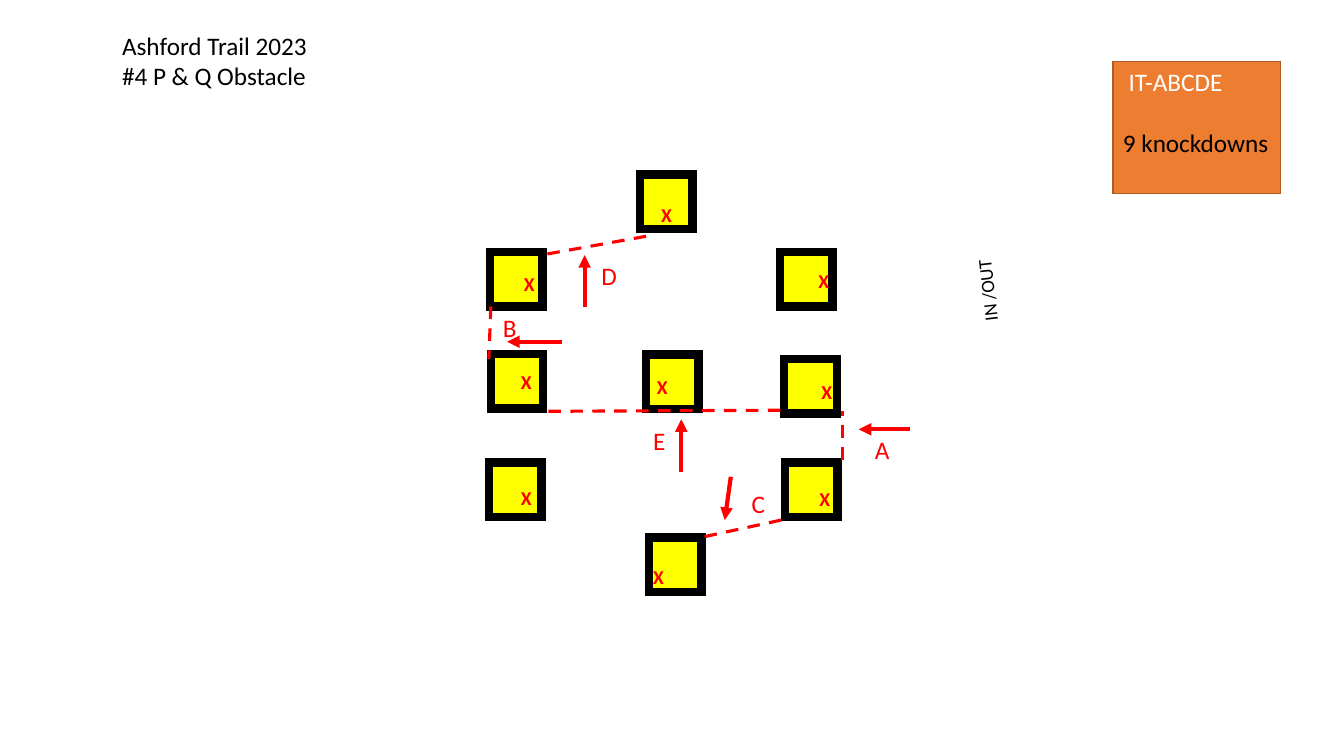
from dataclasses import dataclass

from lxml.etree import SubElement
from pptx import Presentation
from pptx.dml.color import RGBColor as RGB
from pptx.enum.dml import MSO_LINE_DASH_STYLE as DASH
from pptx.enum.shapes import MSO_CONNECTOR as CONNECTOR, MSO_SHAPE as SHAPE
from pptx.enum.text import MSO_ANCHOR as ANCHOR, MSO_AUTO_SIZE as AUTOSIZE, PP_ALIGN as ALIGN
from pptx.oxml.ns import qn
from pptx.util import Pt


@dataclass(frozen=True)
class Theme:
    font: str = "Calibri"
    black: RGB = RGB(0, 0, 0)
    white: RGB = RGB(255, 255, 255)
    red: RGB = RGB(255, 0, 0)
    yellow: RGB = RGB(255, 255, 0)
    orange: RGB = RGB(0xED, 0x7D, 0x31)
    rust: RGB = RGB(0xAF, 0x5C, 0x24)
    text: float = 18
    marker: float = 14
    gate: float = 13.5


theme = Theme()


def write(shape, lines, size, colors, bold=False):
    frame = shape.text_frame
    layout = {"word_wrap": False, "auto_size": AUTOSIZE.NONE, "vertical_anchor": ANCHOR.TOP}
    for key, value in layout.items():
        setattr(frame, key, value)
    frame.text = "\n".join(lines)
    for paragraph, color in zip(frame.paragraphs, colors):
        paragraph.alignment = ALIGN.LEFT
        font = paragraph.runs[0].font
        for key, value in {"name": theme.font, "size": Pt(size), "bold": bold}.items():
            setattr(font, key, value)
        font.color.rgb = color


def add_box(x, y, width, height, fill, outline, weight):
    box = slide.shapes.add_shape(SHAPE.RECTANGLE, Pt(x), Pt(y), Pt(width), Pt(height))
    box.shadow.inherit = False
    box.fill.solid()
    box.fill.fore_color.rgb = fill
    box.line.color.rgb = outline
    box.line.width = Pt(weight)
    SubElement(box._element.spPr.find(qn("a:ln")), qn("a:miter"), lim="800000")
    return box


deck = Presentation()
deck.slide_width, deck.slide_height = Pt(960), Pt(540)
slide = deck.slides.add_slide(deck.slide_layouts[5])

heading = slide.shapes.title
place = {"left": 80, "top": 18, "width": 161.3, "height": 51}
for key, value in place.items():
    setattr(heading, key, Pt(value))
write(heading, ["Ashford Trail 2023", "#4 P & Q Obstacle"], theme.text, [theme.black] * 2)

posts_and_knockdowns = [
    ((463.7, 383.8), (459.4, 400.3)),
    ((457.2, 124.6), (465.1, 141.1)),
    ((349.2, 330.5), (365, 343.4)),
    ((350.6, 252.7), (365, 260.6)),
    ((560.9, 330.5), (578.2, 344.2)),
    ((461.5, 253.4), (462.2, 264.2)),
    ((560.2, 256.3), (579.6, 267.8)),
    ((349.9, 180), (367.2, 190.8)),
    ((557.3, 180), (577.4, 188.6)),
]
for post, knockdown in posts_and_knockdowns:
    add_box(*post, 37.5, 39, theme.yellow, theme.black, 6)
    mark = slide.shapes.add_textbox(*map(Pt, knockdown), Pt(22.3), Pt(24.5))
    write(mark, ["X"], theme.marker, [theme.red], bold=True)

gates = {
    "A": (617.8, 306.7),
    "B": (352.1, 219.6),
    "C": (529.9, 345.6),
    "D": (422.6, 182.2),
    "E": (459.4, 300.2),
}
for letter, spot in gates.items():
    gate = slide.shapes.add_textbox(*map(Pt, spot), Pt(24.5), Pt(28.8))
    write(gate, [letter], theme.text, [theme.red])

gate_lines = [
    (391, 181.4, 463, 168.5),
    (391.7, 293.8, 563.8, 293),
    (601.9, 328.3, 601.9, 293.8),
    (558, 371.5, 501.1, 383.8),
    (350.6, 218.9, 349.2, 256.3),
]
directions = [
    (650.2, 306.7, 613.4, 306.7),
    (486.7, 337, 486.7, 299.5),
    (417.6, 219.6, 417.6, 182.2),
    (522, 340.6, 517.7, 371.5),
    (401.8, 244.1, 362.2, 244.1),
]
for ends in gate_lines + directions:
    stroke = slide.shapes.add_connector(CONNECTOR.STRAIGHT, *map(Pt, ends))
    stroke.line.color.rgb = theme.red
    if ends in directions:
        stroke.line.width = Pt(3)
        SubElement(stroke._element.spPr.find(qn("a:ln")), qn("a:tailEnd"), type="triangle")
    else:
        stroke.line.width = Pt(2.25)
        stroke.line.dash_style = DASH.DASH
    SubElement(stroke._element.spPr, qn("a:effectLst"))

summary = add_box(795, 44, 119.5, 94.3, theme.orange, theme.rust, 1)
write(summary, [" IT-ABCDE", "9 knockdowns"], theme.text, [theme.white, theme.black])
summary.text_frame.paragraphs[1].space_before = Pt(22)

entrance = slide.shapes.add_textbox(Pt(675.4), Pt(195), Pt(59.8), Pt(23.8))
entrance.rotation = 263.6
write(entrance, ["IN /OUT"], theme.gate, [theme.black])

deck.save("out.pptx")
